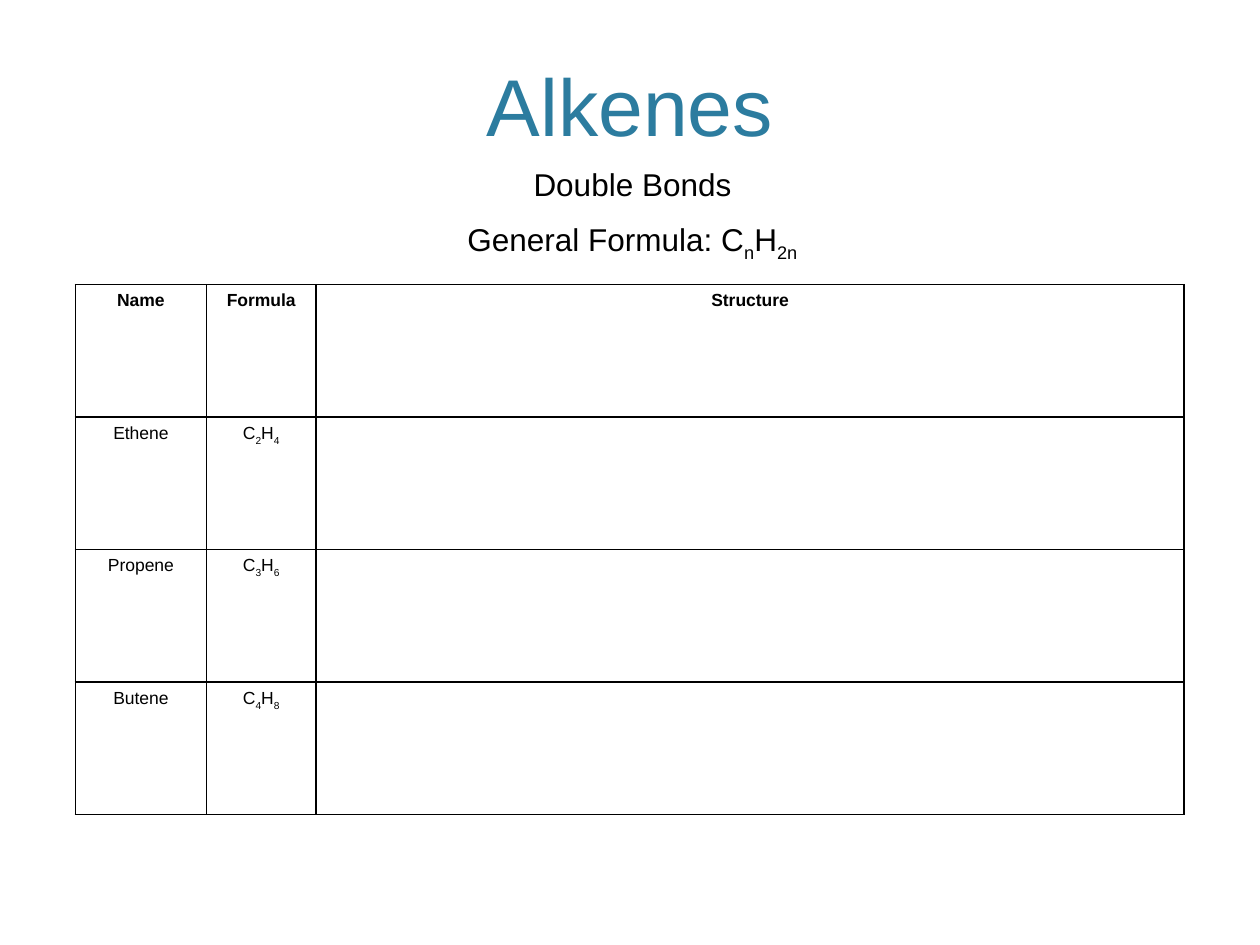
from typing import Any, NamedTuple

from lxml.etree import SubElement
from pptx import Presentation
from pptx.dml.color import RGBColor
from pptx.enum.text import MSO_ANCHOR, PP_ALIGN
from pptx.oxml.ns import qn
from pptx.util import Cm, Pt

BLACK = RGBColor(0x00, 0x00, 0x00)
TEAL = RGBColor(0x2C, 0x7C, 0x9F)

TITLE_FORMAT = {"name": "Arial", "size": Pt(46), "bold": False}
SUBTITLE_FORMAT = {"name": "Arial", "size": Pt(18), "bold": False}
HEADER_FORMAT = {"name": "Arial", "size": Pt(10), "bold": True}
CELL_FORMAT = HEADER_FORMAT | {"bold": False}

COLUMN_WIDTHS = (Cm(2.64), Cm(2.21), Cm(17.5))
ROW_HEIGHT = Cm(2.67)
HEADERS = ("Name", "Formula", "Structure")


class Alkene(NamedTuple):
    name: str
    carbons: str
    hydrogens: str


ALKENES = (
    Alkene("Ethene", "2", "4"),
    Alkene("Propene", "3", "6"),
    Alkene("Butene", "4", "8"),
)


def add_run(paragraph: Any, text: str, font_format: dict, color: RGBColor = BLACK) -> Any:
    run = paragraph.add_run()
    run.text = text
    for attribute, value in font_format.items():
        setattr(run.font, attribute, value)
    run.font.color.rgb = color
    paragraph.alignment = PP_ALIGN.CENTER
    return run


def add_formula(paragraph: Any, carbons: str, hydrogens: str, font_format: dict, baseline: int) -> None:
    for symbol, count in (("C", carbons), ("H", hydrogens)):
        add_run(paragraph, symbol, font_format)
        subscript = add_run(paragraph, count, font_format)
        subscript.font._element.set("baseline", str(baseline))


def add_borders(cell: Any) -> None:
    properties = cell._tc.get_or_add_tcPr()
    for side in ("lnL", "lnR", "lnT", "lnB"):
        line = SubElement(properties, qn(f"a:{side}"), w=str(Pt(1)))
        fill = SubElement(line, qn("a:solidFill"))
        SubElement(fill, qn("a:srgbClr"), val=str(BLACK))


def add_title(slide: Any) -> None:
    title = slide.shapes.title
    title.left, title.top, title.width, title.height = Cm(1.52), Cm(0.3), Cm(22.35), Cm(2.9)
    title.text_frame.vertical_anchor = MSO_ANCHOR.BOTTOM
    add_run(title.text_frame.paragraphs[0], "Alkenes", TITLE_FORMAT, TEAL)


def add_subtitle(slide: Any) -> None:
    text_frame = slide.shapes.add_textbox(Cm(7.29), Cm(3.2), Cm(10.92), Cm(2.16)).text_frame
    text_frame.word_wrap = True
    add_run(text_frame.paragraphs[0], "Double Bonds", SUBTITLE_FORMAT)
    general = text_frame.add_paragraph()
    add_run(general, "General Formula: ", SUBTITLE_FORMAT)
    add_formula(general, "n", "2n", SUBTITLE_FORMAT, -25000)
    for paragraph in text_frame.paragraphs:
        paragraph.space_before = Pt(10)


def add_alkene_table(slide: Any) -> None:
    row_count = len(ALKENES) + 1
    table = slide.shapes.add_table(
        row_count, len(HEADERS), Cm(1.52), Cm(5.74), sum(COLUMN_WIDTHS), ROW_HEIGHT * row_count
    ).table
    table.first_row = table.horz_banding = False
    for column, width in zip(table.columns, COLUMN_WIDTHS):
        column.width = width
    for cell in table.iter_cells():
        add_borders(cell)
        cell.fill.background()
    for index, header in enumerate(HEADERS):
        add_run(table.cell(0, index).text_frame.paragraphs[0], header, HEADER_FORMAT)
    for row, alkene in enumerate(ALKENES, start=1):
        name, formula = (table.cell(row, column).text_frame.paragraphs[0] for column in (0, 1))
        add_run(name, alkene.name, CELL_FORMAT)
        add_formula(formula, alkene.carbons, alkene.hydrogens, CELL_FORMAT, -30000)


def main() -> None:
    presentation = Presentation()
    presentation.slide_width, presentation.slide_height = Cm(25.4), Cm(19.05)
    slide = presentation.slides.add_slide(presentation.slide_layouts[5])
    add_title(slide)
    add_subtitle(slide)
    add_alkene_table(slide)
    presentation.save("out.pptx")


if __name__ == "__main__":
    main()
